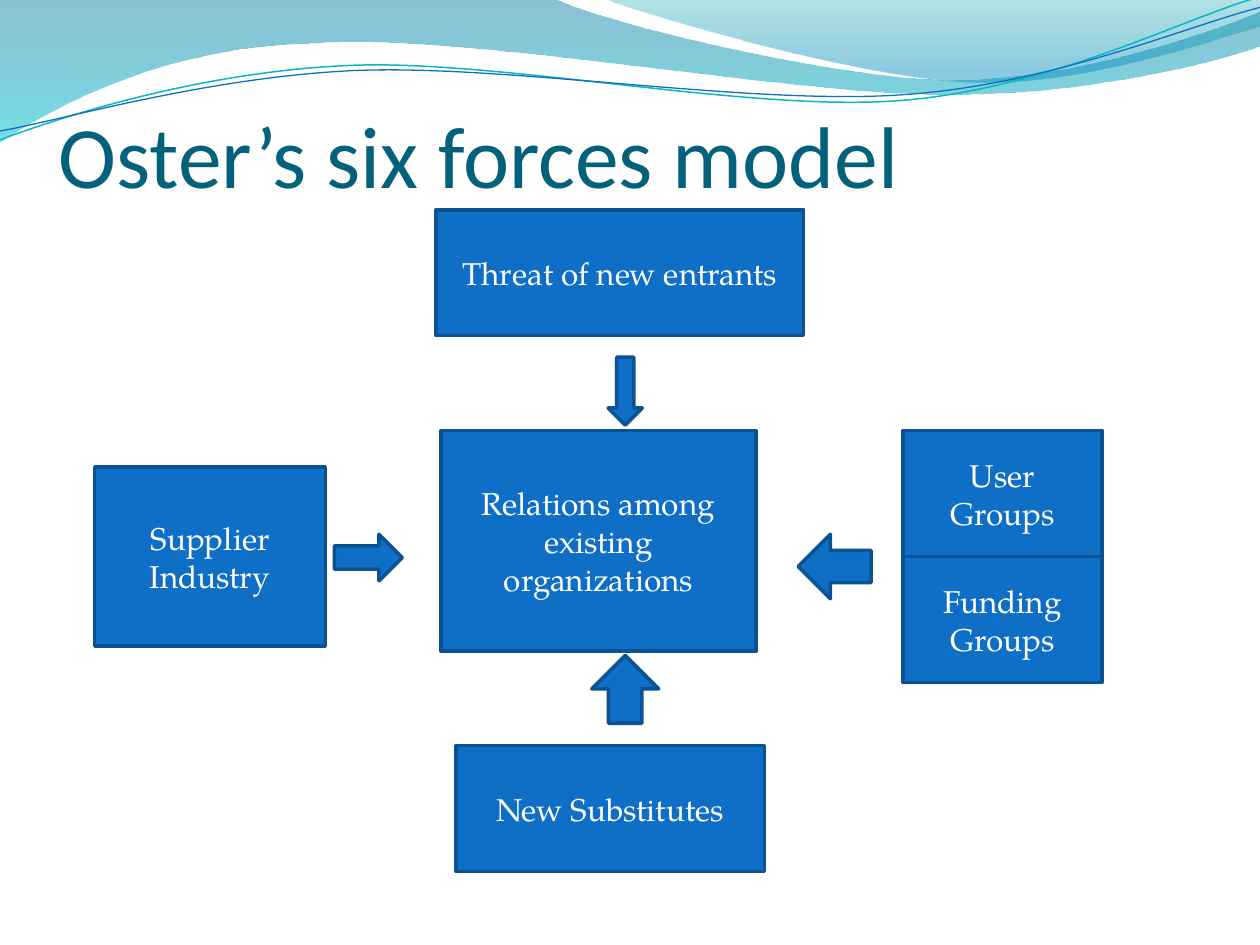
from itertools import chain
from math import cos, radians, sin

from lxml.etree import SubElement
from pptx import Presentation
from pptx.dml.color import RGBColor
from pptx.enum.shapes import MSO_SHAPE as Preset
from pptx.enum.text import MSO_ANCHOR as Anchor, PP_ALIGN as Align
from pptx.oxml.ns import qn
from pptx.util import Cm, Pt

BLUE, EDGE, TEAL, TITLE, WHITE = "0F6FC6", "0B5292", "0AB8BF", "04617B", "FFFFFF"
TILT = 2.7
PIVOT = (12.68, 1.48)

BROAD_WAVE = [
    [(0, 0)], [(11.18, -0.03)],
    [(12.09, 0.43), (16.87, 1.6), (19.25, 1.6)],
    [(21.67, 1.6), (24.33, 0.66), (25.4, 0.23)],
    [(25.43, 0.91)],
    [(24.97, 1.12), (22.1, 1.93), (18.95, 1.9)],
    [(15.8, 1.9), (9.7, 0.71), (6.53, 0.86)],
    [(3.28, 0.91), (1.17, 2.11), (-0.03, 2.87)],
    [(0, 0)],
]
RIGHT_WAVE = [
    [(12.17, -0.03)],
    [(12.93, 0.28), (17.32, 1.57), (19.53, 1.65)],
    [(21.74, 1.75), (24.41, 0.81), (25.4, 0.53)],
    [(25.4, 0)],
    [(12.17, -0.03)],
]
TEAL_STRAND = [
    [(0, 2.82)],
    [(1.22, 2.36), (4.01, 1.45), (7.04, 1.32)],
    [(10.03, 1.19), (15.06, 2.26), (18.11, 2.03)],
    [(21.16, 1.8), (23.83, 0.38), (25.35, -0.05)],
]
BLUE_STRAND = [
    [(0, 2.64)],
    [(1.19, 2.44), (4.17, 1.55), (7.19, 1.42)],
    [(10.24, 1.3), (15.16, 2.13), (18.21, 1.91)],
    [(21.23, 1.7), (23.9, 0.53), (25.4, 0.15)],
]
FORCES = [
    ("Relations among existing organizations", 6.98, 4.45, 6.35, 4.45),
    ("Threat of new entrants", 6.88, 0, 7.41, 2.54),
    ("Funding Groups", 16.29, 6.99, 4.02, 2.54),
    ("User Groups", 16.29, 4.45, 4.02, 2.54),
    ("Supplier Industry", 0, 5.19, 4.65, 3.6),
    ("New Substitutes", 7.28, 10.8, 6.22, 2.54),
]
ARROWS = [
    (Preset.RIGHT_ARROW, 0, 4.83, 6.54, 1.37, 0.94),
    (Preset.RIGHT_ARROW, 180, 14.18, 6.54, 1.47, 1.3),
    (Preset.RIGHT_ARROW, 270, 10.01, 8.99, 1.37, 1.35),
    (Preset.DOWN_ARROW, 0, 10.35, 2.97, 0.69, 1.37),
]


def color(hex_code):
    """Return the colour for a hex string."""
    return RGBColor.from_string(hex_code)


def style_font(paragraph, face, size, hex_code):
    """Format every run of a paragraph."""
    for run in paragraph.runs:
        run.font.name = face
        run.font.size = Pt(size)
        run.font.color.rgb = color(hex_code)


def level(point):
    """Turn a point clockwise about the pivot to undo the tilt."""
    dx, dy = point[0] - PIVOT[0], point[1] - PIVOT[1]
    c, s = cos(radians(TILT)), sin(radians(TILT))
    return PIVOT[0] + dx * c - dy * s, PIVOT[1] + dx * s + dy * c


def add_outline(slide, left, top, segments, close):
    """Draw a freeform whose three-point segments are cubic curves."""
    points = [(Cm(left + x), Cm(top + y)) for x, y in chain.from_iterable(segments)]
    builder = slide.shapes.build_freeform(*points[0])
    builder.add_line_segments(points[1:], close=close)
    outline = builder.convert_to_shape()
    outline.shadow.inherit = False
    steps = iter(list(outline.element.iter(qn("a:lnTo"))))
    for segment in segments[1:]:
        first, *others = [next(steps) for _ in segment]
        if others:
            first.tag = qn("a:cubicBezTo")
        for other in others:
            first.append(other[0])
            other.getparent().remove(other)
    return outline


def add_wave(slide, left, top, segments, stops):
    """Draw a wave with a translucent gradient running downwards."""
    wave = add_outline(slide, left, top, segments, True)
    wave.line.fill.background()
    wave.fill.gradient()
    wave.fill.gradient_angle = 270
    for stop, (position, hex_code, _) in zip(wave.fill.gradient_stops, stops):
        stop.position = position
        stop.color.rgb = color(hex_code)
    shades = wave.element.spPr.iter(qn("a:srgbClr"))
    for shade, (_, _, opacity) in zip(shades, stops):
        SubElement(shade, qn("a:alpha"), val=str(opacity * 1000))


def add_strand(slide, left, top, segments, hex_code, weight):
    """Draw a thin curved line, tilted upwards to the right."""
    flat = [[level(point) for point in segment] for segment in segments]
    strand = add_outline(slide, left, top, flat, False)
    strand.rotation = 360 - TILT
    strand.fill.background()
    strand.line.color.rgb = color(hex_code)
    strand.line.width = Pt(weight)


def add_header(slide, left, top):
    """Draw the waves and strands along the top edge."""
    add_wave(slide, left, top, BROAD_WAVE, [(0, "0074A1", 45), (1, "00C6CF", 55)])
    add_wave(slide, left, top, RIGHT_WAVE, [(0, "00A1A9", 30), (0.8, "008BBF", 45)])
    add_strand(slide, left, top, TEAL_STRAND, TEAL, 0.85)
    add_strand(slide, left, top, BLUE_STRAND, BLUE, 0.75)


def add_title(slide, left, top, width, height):
    """Place the slide title at the bottom of its box."""
    title = slide.shapes.add_textbox(Cm(left), Cm(top), Cm(width), Cm(height))
    frame = title.text_frame
    frame.word_wrap = True
    frame.vertical_anchor = Anchor.BOTTOM
    frame.margin_left = frame.margin_right = frame.margin_bottom = 0
    frame.text = "Oster’s six forces model"
    style_font(frame.paragraphs[0], "Calibri", 50, TITLE)


def add_block(slide, preset, left, top, width, height):
    """Add a blue preset shape with a darker edge."""
    block = slide.shapes.add_shape(preset, Cm(left), Cm(top), Cm(width), Cm(height))
    block.shadow.inherit = False
    block.fill.solid()
    block.fill.fore_color.rgb = color(BLUE)
    block.line.color.rgb = color(EDGE)
    block.line.width = Pt(2)
    return block


def add_forces(slide, left, top):
    """Draw the six forces and the arrows between them."""
    for label, x, y, width, height in FORCES:
        force = add_block(slide, Preset.RECTANGLE, left + x, top + y, width, height)
        frame = force.text_frame
        frame.word_wrap = True
        frame.vertical_anchor = Anchor.MIDDLE
        frame.text = label
        frame.paragraphs[0].alignment = Align.CENTER
        style_font(frame.paragraphs[0], "TeX Gyre Pagella", 18, WHITE)
    for preset, turn, x, y, width, height in ARROWS:
        arrow = add_block(slide, preset, left + x, top + y, width, height)
        arrow.rotation = turn


def main():
    """Build and save the slide."""
    deck = Presentation()
    deck.slide_width, deck.slide_height = Cm(25.4), Cm(19.05)
    slide = deck.slides.add_slide(deck.slide_layouts[6])
    add_header(slide, 0, 0)
    add_title(slide, 1.18, 0.98, 22.86, 3.18)
    add_forces(slide, 1.91, 4.23)
    deck.save("out.pptx")


if __name__ == "__main__":
    main()
